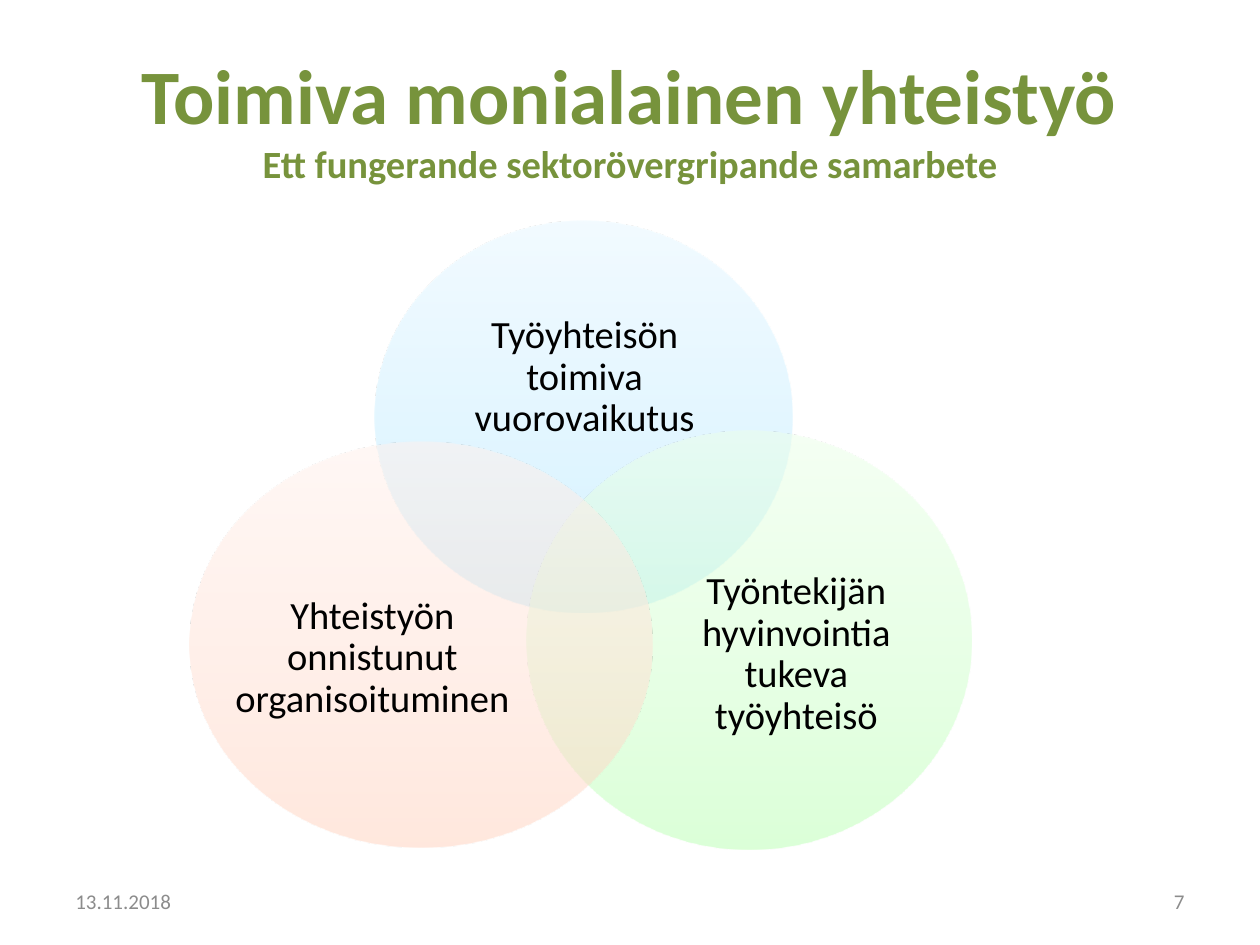
from dataclasses import dataclass
from typing import NamedTuple

from lxml import etree
from pptx import Presentation
from pptx.dml.color import RGBColor
from pptx.enum.shapes import MSO_SHAPE
from pptx.enum.text import MSO_ANCHOR, PP_ALIGN
from pptx.oxml.ns import qn
from pptx.util import Inches, Pt

OVAL = MSO_SHAPE.OVAL
MIDDLE = MSO_ANCHOR.MIDDLE
LEFT, CENTER, RIGHT = PP_ALIGN.LEFT, PP_ALIGN.CENTER, PP_ALIGN.RIGHT


@dataclass(frozen=True)
class Theme:
    font: str = "Calibri"
    green: str = "77933C"
    black: str = "000000"
    grey: str = "8C8C8C"
    blue_fade: tuple = ("A7E6FF", "C1EDFF", "E7F8FF")
    green_fade: tuple = ("B9FFB2", "CDFFC9", "ECFFEA")
    coral_fade: tuple = ("FFD2BD", "FFDED0", "FFF2ED")
    stops: tuple = (0, 35, 100)
    alpha: int = 50
    title: int = 44
    body: int = 22
    small: int = 12


THEME = Theme()


class Box(NamedTuple):
    left: float
    top: float
    width: float
    height: float

    def size(self) -> list:
        return [Inches(side) for side in self]


class Circle(NamedTuple):
    box: Box
    fade: tuple
    label: Box
    text: str


CIRCLES = (
    Circle(Box(2.97, 1.75, 3.32, 3.11), THEME.blue_fade,
           Box(3.42, 2.3, 2.44, 1.4), "Työyhteisön toimiva vuorovaikutus"),
    Circle(Box(4.18, 3.42, 3.53, 3.32), THEME.green_fade,
           Box(5.26, 4.28, 2.12, 1.83),
           "Työntekijän hyvinvointia tukeva työyhteisö"),
    Circle(Box(1.5, 3.51, 3.68, 3.22), THEME.coral_fade,
           Box(1.85, 4.34, 2.21, 1.77),
           "Yhteistyön onnistunut organisoituminen"),
)


def add_text(slide, box: Box, text: str, sizes: tuple, color: str,
             align=CENTER, bold: bool = False):
    frame = slide.shapes.add_textbox(*box.size()).text_frame
    frame.word_wrap = True
    frame.vertical_anchor = MIDDLE
    para = frame.paragraphs[0]
    para.text = text
    para.alignment = align
    for run, size in zip(para.runs, sizes):
        run.font.name = THEME.font
        run.font.size = Pt(size)
        run.font.bold = bold
        run.font.color.rgb = RGBColor.from_string(color)
    return frame


def add_fade(shape, fade: tuple) -> None:
    shape.fill.gradient()
    shape.fill.gradient_angle = 90
    stops = next(shape.element.iter(qn("a:gsLst")))
    for stop in list(stops):
        stops.remove(stop)
    for place, color in zip(THEME.stops, fade):
        stop = etree.SubElement(stops, qn("a:gs"), pos=str(place * 1000))
        tint = etree.SubElement(stop, qn("a:srgbClr"), val=color)
        etree.SubElement(tint, qn("a:alpha"), val=str(THEME.alpha * 1000))


def add_circle(slide, circle: Circle) -> None:
    shape = slide.shapes.add_shape(OVAL, *circle.box.size())
    shape.shadow.inherit = False
    shape.line.fill.background()
    add_fade(shape, circle.fade)
    frame = add_text(slide, circle.label, circle.text, (THEME.body,),
                     THEME.black)
    frame.margin_left = frame.margin_right = 0
    frame.margin_top = frame.margin_bottom = 0
    frame.paragraphs[0].line_spacing = 0.9


def main() -> None:
    deck = Presentation()
    deck.slide_width, deck.slide_height = Inches(10), Inches(7.5)
    slide = deck.slides.add_slide(deck.slide_layouts[6])
    add_text(slide, Box(0.5, 0.3, 9, 1.25),
             "Toimiva monialainen yhteistyö\v"
             "Ett fungerande sektorövergripande samarbete",
             (THEME.title, THEME.body), THEME.green, bold=True)
    for circle in CIRCLES:
        add_circle(slide, circle)
    for left, text, align in ((0.5, "13.11.2018", LEFT), (7.17, "7", RIGHT)):
        add_text(slide, Box(left, 6.95, 2.33, 0.4), text, (THEME.small,),
                 THEME.grey, align)
    deck.save("out.pptx")


if __name__ == "__main__":
    main()
